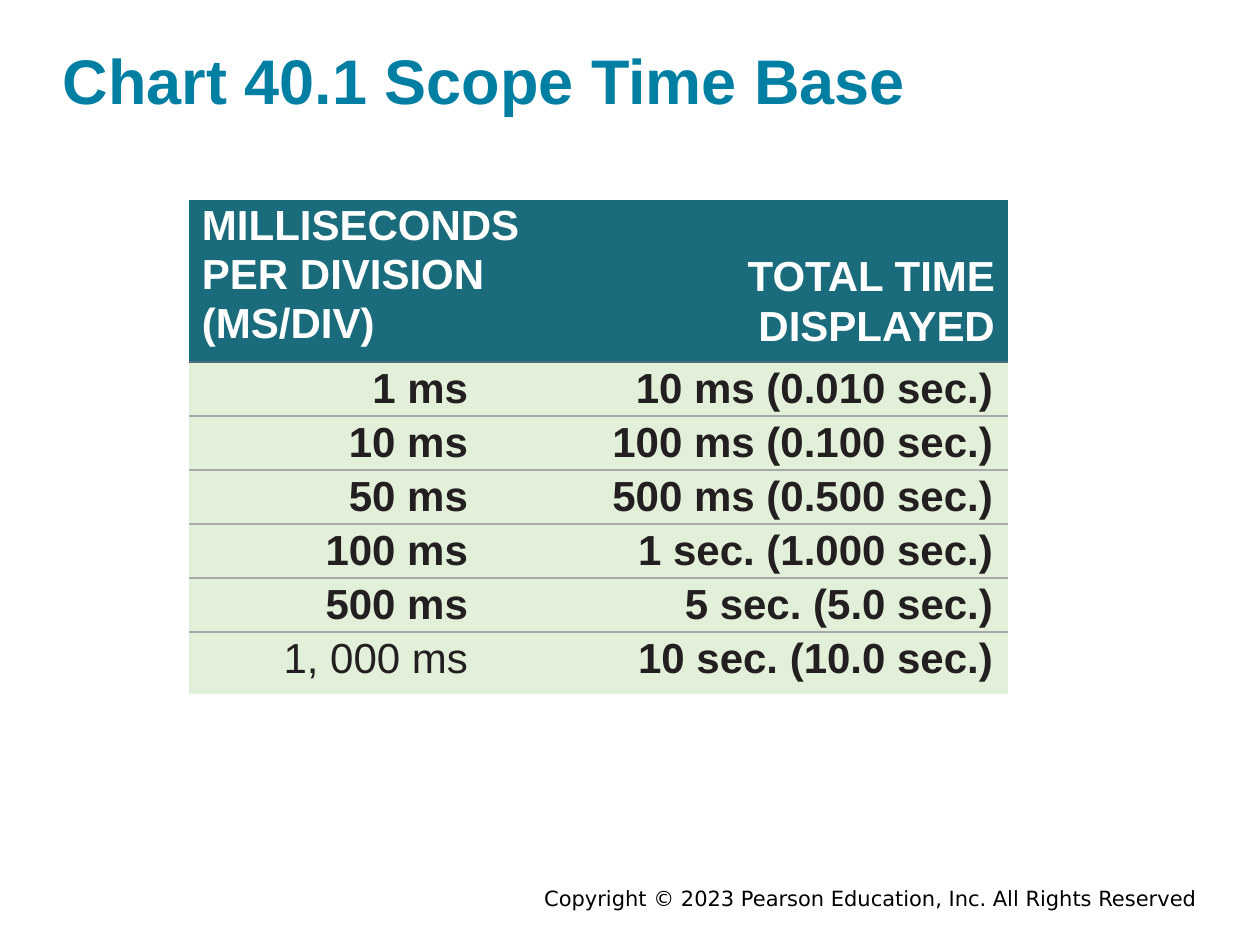
from dataclasses import dataclass
from typing import Optional

from lxml import etree
from pptx import Presentation
from pptx import util as u
from pptx.dml.color import RGBColor
from pptx.enum import text
from pptx.oxml import ns

PX = 914400 / 126

TITLE_BLUE = RGBColor(0x00, 0x7F, 0xA3)
HEADER_TEAL = RGBColor(0x1A, 0x6C, 0x7C)
BODY_GREEN = RGBColor(0xE2, 0xEF, 0xD9)
HEADER_RULE = RGBColor(0x4F, 0x6B, 0x79)
ROW_RULE = RGBColor(0xA7, 0xA9, 0xAC)
INK = RGBColor(0x23, 0x1F, 0x20)
WHITE = RGBColor(0xFF, 0xFF, 0xFF)
BLACK = RGBColor(0x00, 0x00, 0x00)

LEFT, RIGHT = text.PP_ALIGN.LEFT, text.PP_ALIGN.RIGHT


@dataclass(frozen=True)
class Style:
    size: int
    color: RGBColor
    bold: bool = True
    face: str = "Arial"
    align: text.PP_ALIGN = RIGHT


@dataclass(frozen=True)
class Entry:
    wording: str
    style: Style
    fill: RGBColor
    spacing: float = 1.07
    indent_left: int = 0
    indent_right: int = 0
    top_margin: int = 0


HEADER_LEFT = Style(24, WHITE, align=LEFT)
HEADER_RIGHT = Style(24, WHITE)
BODY = Style(24, INK)
BODY_PLAIN = Style(24, INK, bold=False)

TIME_BASES = [
    ("1 ms", "10 ms (0.010 sec.)", BODY),
    ("10 ms", "100 ms (0.100 sec.)", BODY),
    ("50 ms", "500 ms (0.500 sec.)", BODY),
    ("100 ms", "1 sec. (1.000 sec.)", BODY),
    ("500 ms", "5 sec. (5.0 sec.)", BODY),
    ("1, 000 ms", "10 sec. (10.0 sec.)", BODY_PLAIN),
]


def px(length: int) -> u.Emu:
    return u.Emu(round(length * PX))


def write(paragraph, wording: str, style: Style) -> None:
    paragraph.text = wording
    paragraph.alignment = style.align
    font = paragraph.font
    font.name, font.size, font.bold = style.face, u.Pt(style.size), style.bold
    font.color.rgb = style.color


def add_label(slide, wording: str, style: Style, left: int, top: int,
              width: int, height: int, side_margin: int) -> None:
    label = slide.shapes.add_textbox(px(left), px(top), px(width), px(height))
    frame = label.text_frame
    frame.word_wrap = True
    frame.margin_left = frame.margin_right = px(side_margin)
    frame.vertical_anchor = text.MSO_ANCHOR.BOTTOM
    write(frame.paragraphs[0], wording, style)


def rule_cell(cell, above: Optional[RGBColor], below: Optional[RGBColor]) -> None:
    properties = cell._tc.get_or_add_tcPr()
    edges = [("a:lnL", None), ("a:lnR", None), ("a:lnT", above), ("a:lnB", below)]
    for position, (tag, color) in enumerate(edges):
        line = etree.Element(ns.qn(tag), w=str(u.Pt(1)))
        if color is None:
            etree.SubElement(line, ns.qn("a:noFill"))
        else:
            solid = etree.SubElement(line, ns.qn("a:solidFill"))
            etree.SubElement(solid, ns.qn("a:srgbClr"), val=str(color))
        properties.insert(position, line)


def fill_cell(cell, entry: Entry) -> None:
    cell.margin_left = cell.margin_right = cell.margin_bottom = 0
    cell.margin_top = px(entry.top_margin)
    cell.fill.solid()
    cell.fill.fore_color.rgb = entry.fill
    paragraph = cell.text_frame.paragraphs[0]
    write(paragraph, entry.wording, entry.style)
    paragraph.line_spacing = entry.spacing
    indents = paragraph._p.get_or_add_pPr()
    indents.set("marL", str(px(entry.indent_left)))
    indents.set("marR", str(px(entry.indent_right)))


def add_time_table(slide) -> None:
    rows = [(
        Entry("MILLISECONDS PER DIVISION (MS/DIV)", HEADER_LEFT, HEADER_TEAL,
              spacing=1.05, indent_left=13),
        Entry("TOTAL TIME DISPLAYED", HEADER_RIGHT, HEADER_TEAL,
              indent_right=13, top_margin=50),
    )]
    for division, total, style in TIME_BASES:
        rows.append((Entry(division, style, BODY_GREEN, indent_right=103),
                     Entry(total, BODY, BODY_GREEN, indent_right=15)))

    widths = [382, 437]
    heights = [162] + [54] * (len(TIME_BASES) - 1) + [62]
    rules = [None, HEADER_RULE] + [ROW_RULE] * (len(TIME_BASES) - 1) + [None]
    table = slide.shapes.add_table(len(rows), len(widths), px(189), px(200),
                                   px(sum(widths)), px(sum(heights))).table
    table.first_row = table.horz_banding = False
    for column, width in zip(table.columns, widths):
        column.width = px(width)
    for index, (entries, height) in enumerate(zip(rows, heights)):
        table.rows[index].height = px(height)
        for cell, entry in zip(table.rows[index].cells, entries):
            fill_cell(cell, entry)
            rule_cell(cell, rules[index], rules[index + 1])


def main() -> None:
    deck = Presentation()
    deck.slide_width, deck.slide_height = px(1260), px(945)
    slide = deck.slides.add_slide(deck.slide_layouts[6])
    add_label(slide, "Chart 40.1 Scope Time Base",
              Style(36, TITLE_BLUE, align=LEFT), 63, 34, 1134, 89, 0)
    add_time_table(slide)
    add_label(slide, "Copyright © 2023 Pearson Education, Inc. All Rights Reserved",
              Style(12, BLACK, bold=False, face="DejaVu Sans"), 223, 879, 987, 38, 13)
    deck.save("out.pptx")


if __name__ == "__main__":
    main()
